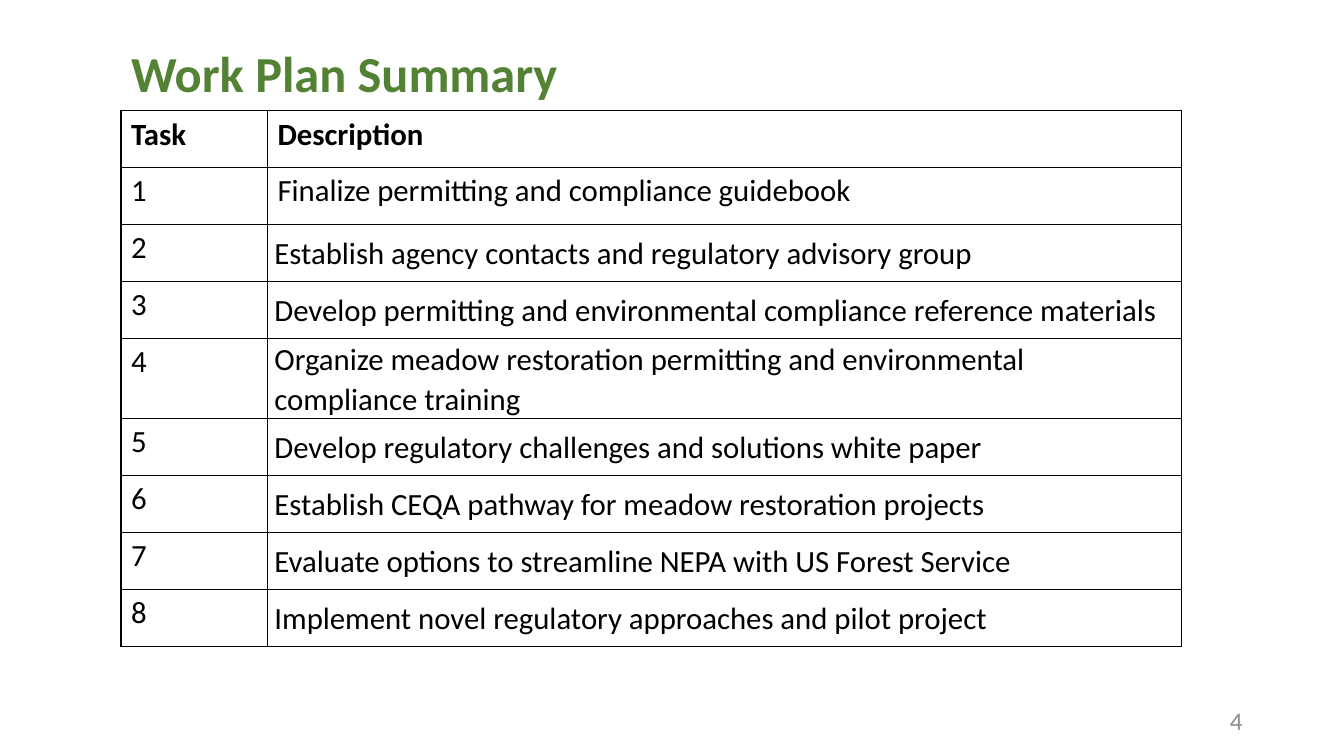
from dataclasses import dataclass

from lxml import etree
from pptx import Presentation
from pptx.dml.color import RGBColor
from pptx.enum.text import MSO_ANCHOR, MSO_AUTO_SIZE, PP_ALIGN
from pptx.oxml.ns import qn
from pptx.util import Inches, Pt

TOP = MSO_ANCHOR.TOP
MIDDLE = MSO_ANCHOR.MIDDLE
LEFT = PP_ALIGN.LEFT
RIGHT = PP_ALIGN.RIGHT
FIXED = MSO_AUTO_SIZE.NONE

WIDTH = Inches(13.33)
HEIGHT = Inches(7.5)
TITLE_ONLY = 5


@dataclass(frozen=True)
class Theme:
    font: str = "Calibri"
    green: str = "548235"
    black: str = "000000"
    grey: str = "8C8C8C"
    title: int = 36
    body: int = 22
    number: int = 18
    rule: int = 1


THEME = Theme()

ROWS = [
    ("Task", "Description"),
    ("1", "Finalize permitting and compliance guidebook"),
    ("2", "Establish agency contacts and regulatory advisory group"),
    ("3", "Develop permitting and environmental compliance reference materials"),
    ("4", "Organize meadow restoration permitting and environmental compliance training"),
    ("5", "Develop regulatory challenges and solutions white paper"),
    ("6", "Establish CEQA pathway for meadow restoration projects"),
    ("7", "Evaluate options to streamline NEPA with US Forest Service"),
    ("8", "Implement novel regulatory approaches and pilot project"),
]
COLS = (0.109, 0.68)
ROW = 0.0753
CENTRED = 2

TIGHT = {
    "vertical_anchor": MIDDLE,
    "margin_left": Inches(0.07),
    "margin_right": Inches(0.07),
    "margin_top": 0,
    "margin_bottom": 0,
}


def apply(item, values):
    for name, value in values.items():
        setattr(item, name, value)


def area(left, top, width, height):
    return {
        "left": int(WIDTH * left),
        "top": int(HEIGHT * top),
        "width": int(WIDTH * width),
        "height": int(HEIGHT * height),
    }


def write(frame, text, size, color, bold=False, align=LEFT, space=1.0):
    para = frame.paragraphs[0]
    apply(para, {"alignment": align, "line_spacing": space})
    run = para.add_run()
    run.text = text
    apply(run.font, {"name": THEME.font, "size": Pt(size), "bold": bold})
    run.font.color.rgb = RGBColor.from_string(color)


def add_title(slide, text, box):
    title = slide.shapes.title
    apply(title, box)
    apply(title.text_frame, {
        "vertical_anchor": MIDDLE, "word_wrap": True, "auto_size": FIXED,
    })
    write(title.text_frame, text, THEME.title, THEME.green, True, space=0.9)


def add_number(slide, text, box):
    label = slide.shapes.add_textbox(**box)
    apply(label.text_frame, {"vertical_anchor": MIDDLE, "word_wrap": True})
    write(label.text_frame, text, THEME.number, THEME.grey, align=RIGHT)


def outline(cell):
    props = cell._tc.get_or_add_tcPr()
    for place, side in enumerate(("lnL", "lnR", "lnT", "lnB")):
        line = etree.Element(qn("a:" + side), w=str(Pt(THEME.rule)))
        fill = etree.SubElement(line, qn("a:solidFill"))
        etree.SubElement(fill, qn("a:srgbClr"), val=THEME.black)
        props.insert(place, line)


def add_grid(slide, rows, left, top):
    box = area(left, top, sum(COLS), ROW * len(rows))
    table = slide.shapes.add_table(len(rows), len(COLS), **box).table
    apply(table, {"first_row": False, "horz_banding": False})
    for col, share in zip(table.columns, COLS):
        col.width = int(WIDTH * share)
    for i, texts in enumerate(rows):
        table.rows[i].height = int(HEIGHT * ROW)
        for j, text in enumerate(texts):
            cell = table.cell(i, j)
            tight = j == 1 and i >= CENTRED
            apply(cell, TIGHT if tight else {"vertical_anchor": TOP})
            cell.fill.background()
            outline(cell)
            write(cell.text_frame, text, THEME.body, THEME.black,
                  bold=i == 0, space=1.07 if tight else 1.0)


def main():
    deck = Presentation()
    apply(deck, {"slide_width": WIDTH, "slide_height": HEIGHT})
    slide = deck.slides.add_slide(deck.slide_layouts[TITLE_ONLY])
    add_title(slide, "Work Plan Summary", area(0.09, 0.004, 0.863, 0.193))
    add_grid(slide, ROWS, 0.09, 0.1465)
    add_number(slide, "4", area(0.707, 0.927, 0.225, 0.053))
    deck.save("out.pptx")


if __name__ == "__main__":
    main()
